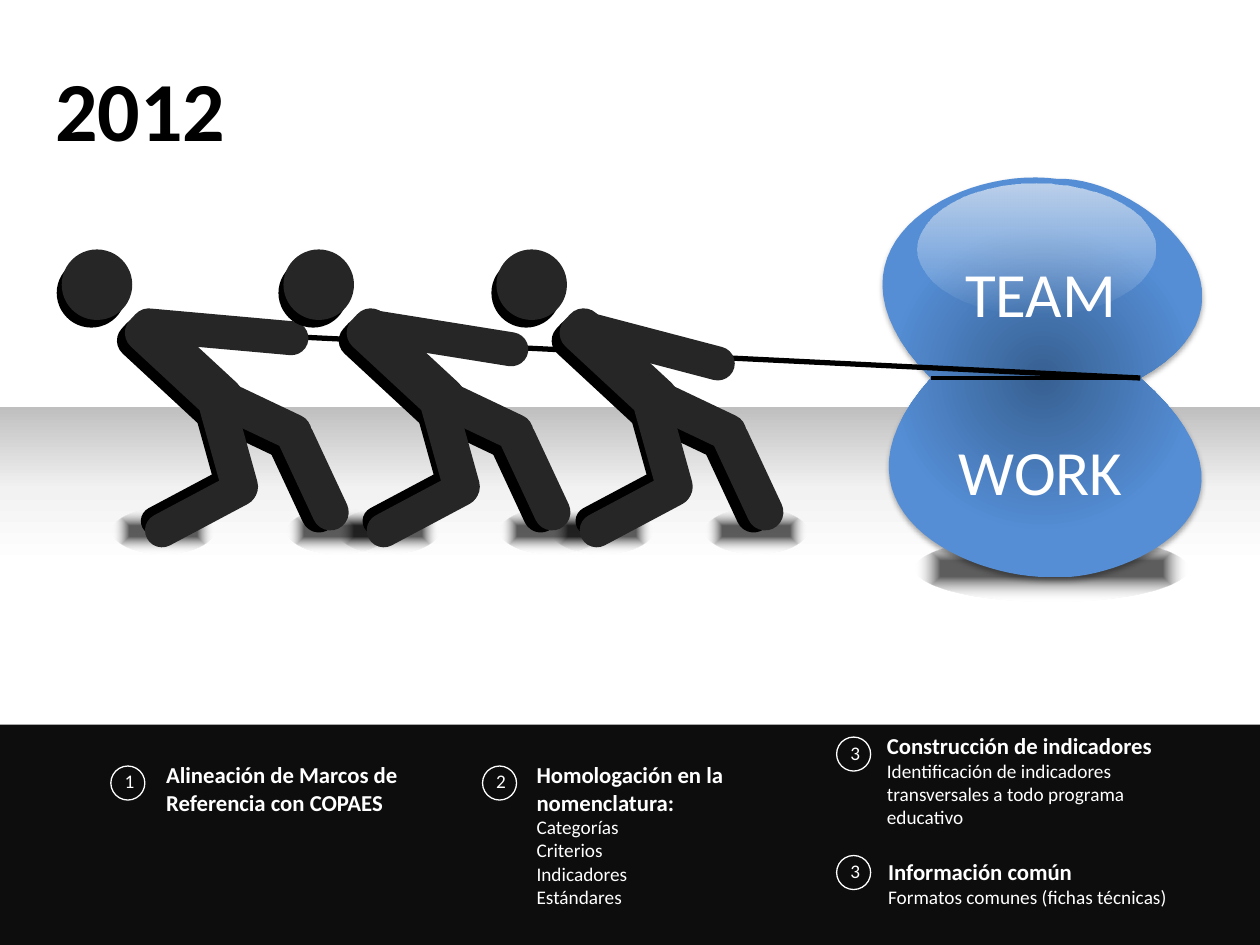
from lxml.etree import SubElement
from pptx import Presentation
from pptx.dml.color import RGBColor
from pptx.enum.shapes import MSO_CONNECTOR, MSO_SHAPE
from pptx.enum.text import MSO_AUTO_SIZE, PP_ALIGN
from pptx.oxml.ns import qn
from pptx.util import Inches, Pt

BLACK, CHARCOAL, WHITE, PANEL = "000000", "262626", "FFFFFF", "0D0D0D"

POINTS = [
    ("1", (0.88, 6.08), (1.22, 5.99, 2.42, 0.54),
     "Alineación de Marcos de Referencia con COPAES", []),
    ("2", (3.83, 6.08), (4.16, 5.99, 2.42, 1.58),
     "Homologación en la nomenclatura:",
     ["Categorías", "Criterios", "Indicadores", "Estándares"]),
    ("3", (6.64, 5.85), (6.94, 5.76, 2.42, 0.88),
     "Construcción de indicadores",
     ["Identificación de indicadores transversales a todo programa educativo"]),
    ("3", (6.64, 6.79), (6.95, 6.76, 2.42, 0.69),
     "Información común", ["Formatos comunes (fichas técnicas)"]),
]
WEIGHT_WORDS = [("TEAM", 1.97), ("WORK", 3.38)]

PULLERS = [
    (0, (1.63, 1.95, 0.27, 1.37, 275.1)),
    (1.76, (3.38, 2, 0.27, 1.37, 279.1)),
    (3.45, (5.03, 2.06, 0.27, 1.37, 284.7)),
]
HIND_THIGH_SHADE = (1.61, 3.09, 0.28, 0.8, 164.5)
HEAD_SHADE = (0.45, 2.05, 0.55, 0.55)
HEAD = (0.49, 1.98, 0.56, 0.56)
UPPER_SHADES = [(1.85, 2.91, 0.28, 0.93, 295.4), (1.22, 2.41, 0.34, 1.1, 312.8)]
LOWER_LIMBS = [
    (1.4, 3.55, 0.23, 0.87, 62, BLACK),
    (1.67, 3.07, 0.29, 0.95, 164.5, CHARCOAL),
    (1.46, 3.56, 0.27, 0.97, 62, CHARCOAL),
    (1.28, 2.34, 0.36, 1.11, 312.8, CHARCOAL),
    (2.24, 3.26, 0.28, 1, 335, BLACK),
    (2.34, 3.3, 0.29, 0.94, 335, CHARCOAL),
    (1.94, 2.9, 0.29, 0.83, 295.4, CHARCOAL),
]
FOOT_SHADOWS = [5.6, 4.38, 3.97, 2.68, 2.28, 0.89]
GROUND_STOPS = [(0, "BFBFBF", 100), (26, "F2F2F2", 100), (50, WHITE, 100)]
SHADOW_STOPS = [(24, BLACK, 63), (100, WHITE, 0)]
WEIGHT_STOPS = [(0, "376092", 100), (61, "558ED5", 100)]
SHINE_STOPS = [(0, "FFFCF9", 61), (100, WHITE, 0)]
KNOT = (9.05, 3)
WEIGHT_START = (7.39, 3)
WEIGHT_CURVES = [
    ((6.38, 1.99), (7.58, 1.31), (8.39, 1.42)),
    ((9.04, 1.39), (10.21, 2.35), KNOT),
    ((10.27, 4.07), (8.87, 4.61), (8.39, 4.58)),
    ((7.68, 4.61), (6.46, 4.03), WEIGHT_START),
]

prs = Presentation()
prs.slide_width, prs.slide_height = Inches(10), Inches(7.5)
slide = prs.slides.add_slide(prs.slide_layouts[6])
shapes = slide.shapes


def color(value):
    return RGBColor.from_string(value)


def add_color(parent, value, opacity):
    node = SubElement(parent, qn("a:srgbClr"), val=value)
    if opacity < 100:
        SubElement(node, qn("a:alpha"), val=str(opacity * 1000))


def set_gradient(shape, stops, outline=None):
    shape.fill.gradient()
    gradient = shape._element.spPr.find(qn("a:gradFill"))
    for child in list(gradient):
        gradient.remove(child)
    stop_list = SubElement(gradient, qn("a:gsLst"))
    for position, value, opacity in stops:
        stop = SubElement(stop_list, qn("a:gs"), pos=str(position * 1000))
        add_color(stop, value, opacity)
    if outline:
        route = SubElement(gradient, qn("a:path"), {"path": outline})
        SubElement(route, qn("a:fillToRect"), l="50000", t="50000", r="50000", b="50000")
    else:
        SubElement(gradient, qn("a:lin"), ang="5400000", scaled="0")


def add_form(kind, box, fill=None, line=None, rotation=0):
    form = shapes.add_shape(kind, *map(Inches, box))
    form.shadow.inherit = False
    form.rotation = rotation
    if fill:
        form.fill.solid()
        form.fill.fore_color.rgb = color(fill)
    else:
        form.fill.background()
    if line:
        form.line.color.rgb = color(line)
        form.line.width = Pt(0.75)
    else:
        form.line.fill.background()
    return form


def add_limb(x, y, width, length, angle, fill, shift=0):
    limb = add_form(MSO_SHAPE.ROUNDED_RECTANGLE, (x + shift, y, width, length),
                    fill, rotation=angle)
    limb.adjustments[0] = 0.41 if angle == 312.8 else 0.5


def add_rope(start, end, width):
    rope = shapes.add_connector(MSO_CONNECTOR.STRAIGHT, *map(Inches, (*start, *end)))
    rope.line.color.rgb = color(BLACK)
    rope.line.width = Pt(width)
    SubElement(rope._element.spPr, qn("a:effectLst"))


def add_text(box, heading, details=(), size=13, bold=False, fill=WHITE, align=PP_ALIGN.LEFT):
    frame = shapes.add_textbox(*map(Inches, box)).text_frame
    frame.word_wrap = True
    frame.auto_size = MSO_AUTO_SIZE.SHAPE_TO_FIT_TEXT
    for index, words in enumerate([heading, *details]):
        paragraph = frame.add_paragraph() if index else frame.paragraphs[0]
        paragraph.alignment = align
        run = paragraph.add_run()
        run.text = words
        run.font.name = "Calibri"
        run.font.size = Pt(11 if index else size)
        run.font.bold = bold and not index
        run.font.color.rgb = color(fill)


def curve_points(start, curves, steps=30):
    for first, second, end in curves:
        for step in range(1, steps + 1):
            t = step / steps
            u = 1 - t
            yield tuple(
                Inches(u**3 * a + 3 * u * u * t * b + 3 * u * t * t * c + t**3 * d)
                for a, b, c, d in zip(start, first, second, end))
        start = end


def add_weight():
    builder = shapes.build_freeform(*map(Inches, WEIGHT_START), scale=1.0)
    builder.add_line_segments(list(curve_points(WEIGHT_START, WEIGHT_CURVES)), close=True)
    weight = builder.convert_to_shape()
    weight.line.fill.background()
    set_gradient(weight, WEIGHT_STOPS, "circle")
    weight.shadow.inherit = False
    effects = weight._element.spPr.find(qn("a:effectLst"))
    shadow = SubElement(effects, qn("a:outerShdw"), blurRad=str(Pt(3.1)),
                        dist=str(Pt(1.8)), dir="5400000", rotWithShape="0")
    add_color(shadow, BLACK, 35)


def add_puller(shift, arm):
    thigh_shade, back_shade = UPPER_SHADES
    add_limb(*thigh_shade, BLACK, shift)
    x, *rest = HEAD_SHADE
    add_form(MSO_SHAPE.OVAL, (x + shift, *rest), BLACK)
    add_limb(*back_shade, BLACK, shift)
    x, *rest = HEAD
    add_form(MSO_SHAPE.OVAL, (x + shift, *rest), CHARCOAL)
    add_limb(*arm, CHARCOAL)
    for limb in LOWER_LIMBS:
        add_limb(*limb, shift)


set_gradient(add_form(MSO_SHAPE.RECTANGLE, (0, 3.23, 10, 2.52)), GROUND_STOPS)
for box in [*((x, 4.04, 0.8, 0.35) for x in FOOT_SHADOWS), (7.27, 4.25, 2.15, 0.52)]:
    set_gradient(add_form(MSO_SHAPE.OVAL, box), SHADOW_STOPS, "shape")
add_form(MSO_SHAPE.RECTANGLE, (0, 5.75, 10, 1.75), PANEL)
add_text((0.34, 0.41, 6.17, 0.91), "2012", size=48, bold=True, fill=BLACK)

add_weight()
for shift, _ in PULLERS:
    add_limb(*HIND_THIGH_SHADE, BLACK, shift)
add_rope((2.07, 2.66), KNOT, 3)
for shift, arm in PULLERS:
    add_puller(shift, arm)
add_rope(KNOT, WEIGHT_START, 2.5)
set_gradient(add_form(MSO_SHAPE.OVAL, (7.28, 1.46, 1.89, 1.04)), SHINE_STOPS)
for word, top in WEIGHT_WORDS:
    add_text((7.11, top, 2.3, 0.71), word, size=36, align=PP_ALIGN.CENTER)

for number, (x, y), box, heading, details in POINTS:
    add_text(box, heading, details, bold=True)
    add_form(MSO_SHAPE.OVAL, (x, y, 0.27, 0.27), line=WHITE)
    add_text((x + 0.01, y - 0.02, 0.26, 0.29), number, size=11)

prs.save("out.pptx")
